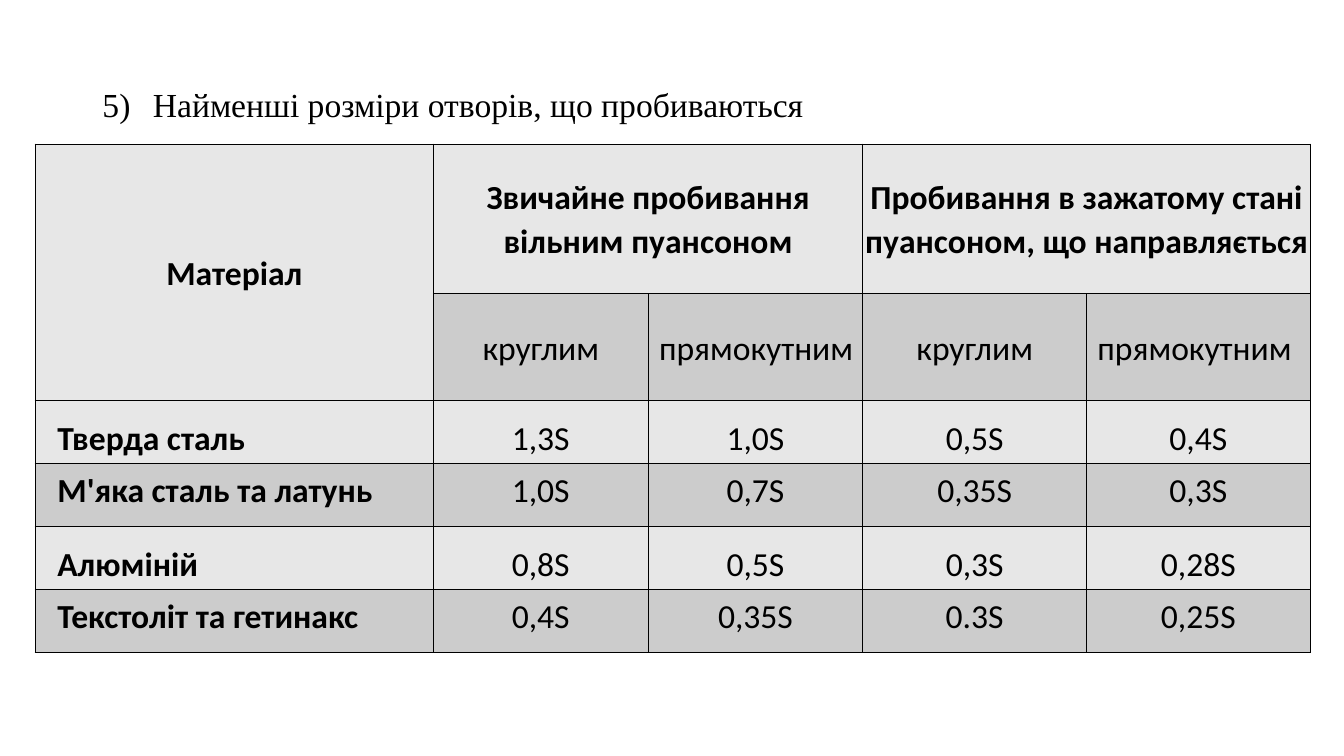
from lxml import etree
from pptx import Presentation
from pptx.dml.color import RGBColor
from pptx.enum.text import MSO_ANCHOR, PP_ALIGN
from pptx.oxml.ns import qn
from pptx.util import Pt

LEFT, MID = PP_ALIGN.LEFT, PP_ALIGN.CENTER
TOP, CENTER, BASE = MSO_ANCHOR.TOP, MSO_ANCHOR.MIDDLE, MSO_ANCHOR.BOTTOM
HUES = {"ink": "000000", "light": "E7E7E7", "dark": "CCCCCC"}


def write(frame, text, face, bold, align, margin=0, indent=0):
    """Fill a text frame with one formatted paragraph."""
    para = frame.paragraphs[0]
    para.alignment, para.line_spacing = align, 1.07
    props = para._p.get_or_add_pPr()
    props.set("marL", str(Pt(margin)))
    props.set("indent", str(Pt(indent)))
    run = para.add_run()
    run.text = text
    for name, value in {"name": face, "size": Pt(24), "bold": bold}.items():
        setattr(run.font, name, value)
    run.font.color.rgb = RGBColor.from_string(HUES["ink"])
    return props


def frame_cell(cell):
    """Draw a thin line on all four sides of a cell."""
    props = cell._tc.get_or_add_tcPr()
    for spot, side in enumerate(("lnL", "lnR", "lnT", "lnB")):
        line = etree.Element(qn("a:" + side), w=str(Pt(1)))
        fill = etree.SubElement(line, qn("a:solidFill"))
        etree.SubElement(fill, qn("a:srgbClr"), val=HUES["ink"])
        props.insert(spot, line)


deck = Presentation()
deck.slide_width, deck.slide_height = Pt(960), Pt(540)
slide = deck.slides.add_slide(deck.slide_layouts[5])

# Numbered title
title = slide.shapes.title
box = {"left": 66, "top": 49.5, "width": 828, "height": 48}
for name, value in box.items():
    setattr(title, name, Pt(value))
title.text_frame.vertical_anchor = CENTER
props = write(title.text_frame, "Найменші розміри отворів, що пробиваються",
              "Times New Roman", False, LEFT, 36, -36)
etree.SubElement(props, qn("a:buAutoNum"), type="arabicParenR", startAt="5")

# Table content: None marks a cell covered by a merge
rows = [
    ["Матеріал", "Звичайне пробивання вільним пуансоном", None,
     "Пробивання в зажатому стані пуансоном, що направляється", None],
    [None, "круглим", "прямокутним", "круглим", "прямокутним"],
    ["Тверда сталь", "1,3S", "1,0S", "0,5S", "0,4S"],
    ["М'яка сталь та латунь", "1,0S", "0,7S", "0,35S", "0,3S"],
    ["Алюміній", "0,8S", "0,5S", "0,3S", "0,28S"],
    ["Текстоліт та гетинакс", "0,4S", "0,35S", "0.3S", "0,25S"],
]
widths = [284.4, 153.4, 153.4, 159.8, 159.8]
heights = [106.8, 76.5] + [45] * 4

# Table grid
table = slide.shapes.add_table(len(rows), len(widths), Pt(25.2), Pt(103),
                               Pt(sum(widths)), Pt(sum(heights))).table
for col, width in zip(table.columns, widths):
    col.width = Pt(width)
for row, height in zip(table.rows, heights):
    row.height = Pt(height)
for start, end in (((0, 0), (1, 0)), ((0, 1), (0, 2)), ((0, 3), (0, 4))):
    table.cell(*start).merge(table.cell(*end))

# Cells: shades alternate by row, body text sits low or high in turn
pads = {"margin_left": 0.8, "margin_right": 0.8,
        "margin_top": 3, "margin_bottom": 3}
for r, row in enumerate(rows):
    shade = HUES["dark" if r % 2 else "light"]
    for c, text in enumerate(row):
        cell = table.cell(r, c)
        for name, value in pads.items():
            setattr(cell, name, Pt(value))
        cell.vertical_anchor = CENTER if r < 2 else TOP if r % 2 else BASE
        cell.fill.solid()
        cell.fill.fore_color.rgb = RGBColor.from_string(shade)
        frame_cell(cell)
        if text is None:
            continue
        align, margin = MID, 0
        if r > 1 and c == 0:
            align, margin = LEFT, 15
        elif text == "прямокутним":
            align, margin = LEFT, 7
        write(cell.text_frame, text, "Calibri", r == 0 or c == 0, align, margin)

deck.save("out.pptx")
